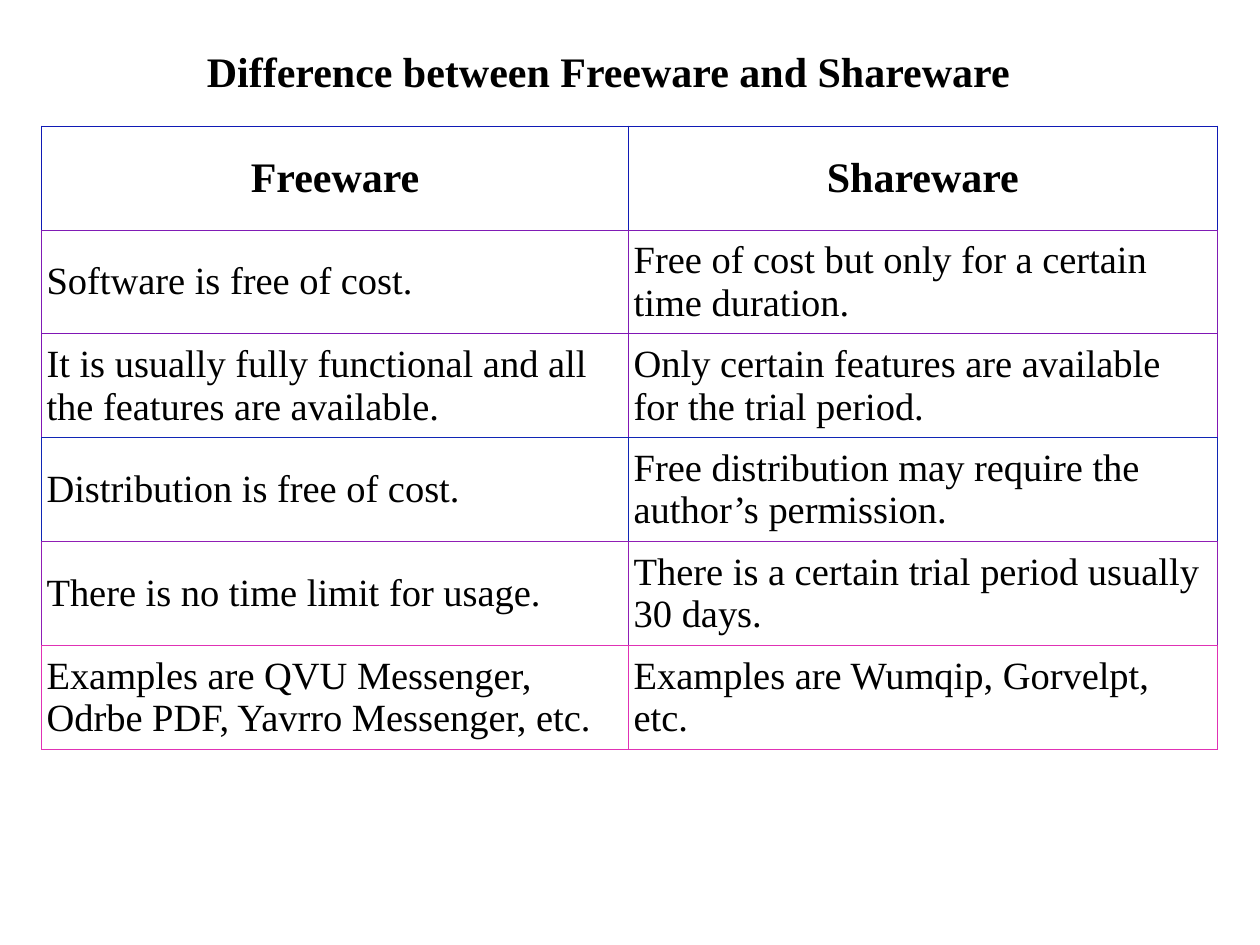
import pptx
import pptx.dml.color
import pptx.enum.text
import pptx.oxml.ns
import pptx.util
from lxml import etree

Inches = pptx.util.Inches
Pt = pptx.util.Pt
ALIGN = pptx.enum.text.PP_ALIGN

HEADINGS = ("Freeware", "Shareware")
COMPARISONS = [
    ("Software is free of cost.",
     "Free of cost but only for a certain time duration."),
    ("It is usually fully functional and all the features are available.",
     "Only certain features are available for the trial period."),
    ("Distribution is free of cost.",
     "Free distribution may require the author’s permission."),
    ("There is no time limit for usage.",
     "There is a certain trial period usually 30 days."),
    ("Examples are QVU Messenger, Odrबe PDF, Yavrro Messenger, etc.".replace("Odrबe", "Odrbe"),
     "Examples are Wumqip, Gorvelpt, etc."),
]
ROW_BORDERS = ["101AB5", "801CB5", "8016B5", "1026B5", "901EB5", "E031B5"]


def color(hex_code):
    return pptx.dml.color.RGBColor.from_string(hex_code)


class SlideBuilder:
    font_name = "Times New Roman"
    text_color = "000000"
    cell_fill = "FFFFFF"
    heading_size = 24
    body_size = 22
    cell_margin = Inches(0.04)
    border_width = Pt(0.5)

    def __init__(self, slide):
        self.slide = slide

    def style(self, paragraph, heading):
        paragraph.alignment = ALIGN.CENTER if heading else ALIGN.LEFT
        font = paragraph.font
        font.name = self.font_name
        font.size = Pt(self.heading_size if heading else self.body_size)
        font.bold = heading
        font.color.rgb = color(self.text_color)

    def title(self, text, left, top, width, height):
        box = self.slide.shapes.add_textbox(left, top, width, height)
        frame = box.text_frame
        frame.word_wrap = True
        frame.text = text
        self.style(frame.paragraphs[0], heading=True)

    def border(self, cell, side, hex_code):
        """Draw one side (L, R, T or B) of a cell; call before filling it."""
        qn = pptx.oxml.ns.qn
        properties = cell._tc.get_or_add_tcPr()
        line = etree.SubElement(properties, qn(f"a:ln{side}"), w=str(self.border_width))
        fill = etree.SubElement(line, qn("a:solidFill"))
        etree.SubElement(fill, qn("a:srgbClr"), val=hex_code)

    def table(self, rows, row_borders, left, top, column_widths, height):
        """Add a table whose first row is the heading, with one border colour per row."""
        frame = self.slide.shapes.add_table(
            len(rows), len(column_widths), left, top, sum(column_widths), height)
        table = frame.table
        for column, width in zip(table.columns, column_widths):
            column.width = width
        bottom_borders = row_borders[1:] + row_borders[-1:]
        for r, (texts, own, below) in enumerate(zip(rows, row_borders, bottom_borders)):
            for c, text in enumerate(texts):
                cell = table.cell(r, c)
                for side, hex_code in zip("LRTB", (own, own, own, below)):
                    self.border(cell, side, hex_code)
                cell.fill.solid()
                cell.fill.fore_color.rgb = color(self.cell_fill)
                cell.margin_left = cell.margin_right = self.cell_margin
                cell.margin_top = cell.margin_bottom = self.cell_margin
                cell.vertical_anchor = pptx.enum.text.MSO_ANCHOR.MIDDLE
                cell.text = text
                self.style(cell.text_frame.paragraphs[0], heading=r == 0)


def main():
    presentation = pptx.Presentation()
    presentation.slide_width = Inches(10)
    presentation.slide_height = Inches(7.5)
    builder = SlideBuilder(presentation.slides.add_slide(presentation.slide_layouts[6]))
    builder.table([HEADINGS, *COMPARISONS], ROW_BORDERS, Inches(0.33), Inches(1),
                  [Inches(4.66), Inches(4.67)], Inches(4.95))
    builder.title("Difference between Freeware and Shareware",
                  Inches(0.83), Inches(0.31), Inches(8), Inches(0.5))
    presentation.save("out.pptx")


if __name__ == "__main__":
    main()
